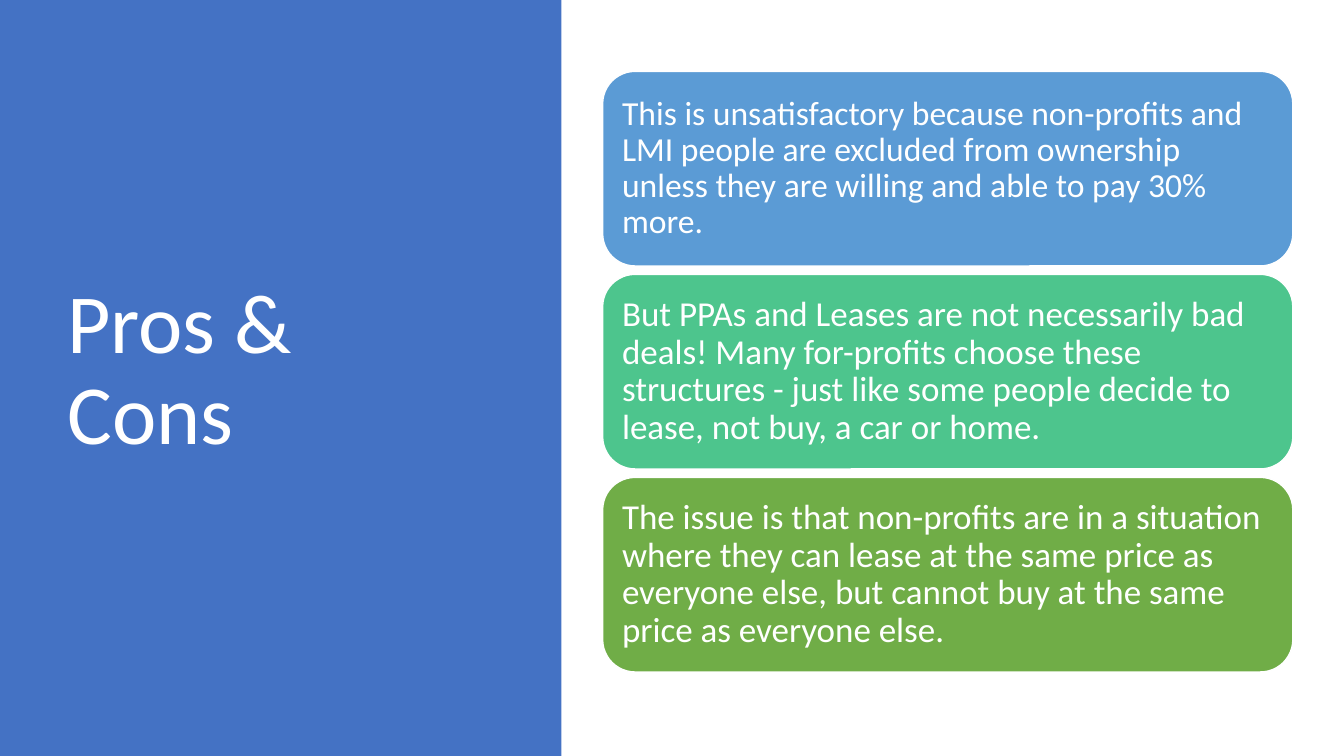
"""Build the Pros & Cons slide with a title panel and three stacked cards."""
from pptx import Presentation
from pptx.dml.color import RGBColor
from pptx.enum.shapes import MSO_SHAPE
from pptx.enum.text import MSO_ANCHOR, PP_ALIGN
from pptx.util import Pt

COLORS = {"panel": "4472C4", "white": "FFFFFF", "blue": "5B9BD5", "teal": "4DC58D", "green": "70AD47"}
TITLE = "Pros & Cons"
CARDS = [
    ("This is unsatisfactory because non-profits and LMI people are excluded from ownership "
     "unless they are willing and able to pay 30% more.", "blue", 24),
    ("But PPAs and Leases are not necessarily bad deals! Many for-profits choose these "
     "structures - just like some people decide to lease, not buy, a car or home.", "teal", 25),
    ("The issue is that non-profits are in a situation where they can lease at the same price "
     "as everyone else, but cannot buy at the same price as everyone else.", "green", 25),
]
SLIDE_WIDTH, SLIDE_HEIGHT = 960, 540
PANEL_WIDTH = 401
CARD_LEFT, CARD_TOP, CARD_WIDTH, CARD_HEIGHT, CARD_GAP = 430.5, 51, 493, 139, 6
INSET = 7.2


def color(name):
    """Return the named palette colour."""
    return RGBColor.from_string(COLORS[name])


def add_block(slide, preset, box, fill):
    """Add a flat filled shape without an outline."""
    shape = slide.shapes.add_shape(preset, *map(Pt, box))
    shape.shadow.inherit = False
    shape.fill.solid()
    shape.fill.fore_color.rgb = color(fill)
    shape.line.fill.background()
    return shape


def write(shape, text, size):
    """Write white, left-aligned, vertically centred text."""
    frame = shape.text_frame
    frame.word_wrap = True
    frame.vertical_anchor = MSO_ANCHOR.MIDDLE
    frame.margin_left = frame.margin_right = frame.margin_top = frame.margin_bottom = Pt(INSET)
    paragraph = frame.paragraphs[0]
    paragraph.text = text
    paragraph.alignment = PP_ALIGN.LEFT
    paragraph.line_spacing = 0.9
    paragraph.font.name = "Calibri"
    paragraph.font.size = Pt(size)
    paragraph.font.color.rgb = color("white")


def main():
    """Create and save the presentation."""
    presentation = Presentation()
    presentation.slide_width, presentation.slide_height = Pt(SLIDE_WIDTH), Pt(SLIDE_HEIGHT)
    slide = presentation.slides.add_slide(presentation.slide_layouts[6])

    add_block(slide, MSO_SHAPE.RECTANGLE, (0, 0, PANEL_WIDTH, SLIDE_HEIGHT), "panel")
    title = slide.shapes.add_textbox(Pt(41), Pt(49), Pt(299.5), Pt(433.5))
    write(title, TITLE, 60)

    for index, (text, fill, size) in enumerate(CARDS):
        top = CARD_TOP + index * (CARD_HEIGHT + CARD_GAP)
        box = (CARD_LEFT, top, CARD_WIDTH, CARD_HEIGHT)
        card = add_block(slide, MSO_SHAPE.ROUNDED_RECTANGLE, box, fill)
        card.line.color.rgb = color("white")
        card.line.width = Pt(1)
        write(card, text, size)

    presentation.save("out.pptx")


if __name__ == "__main__":
    main()
